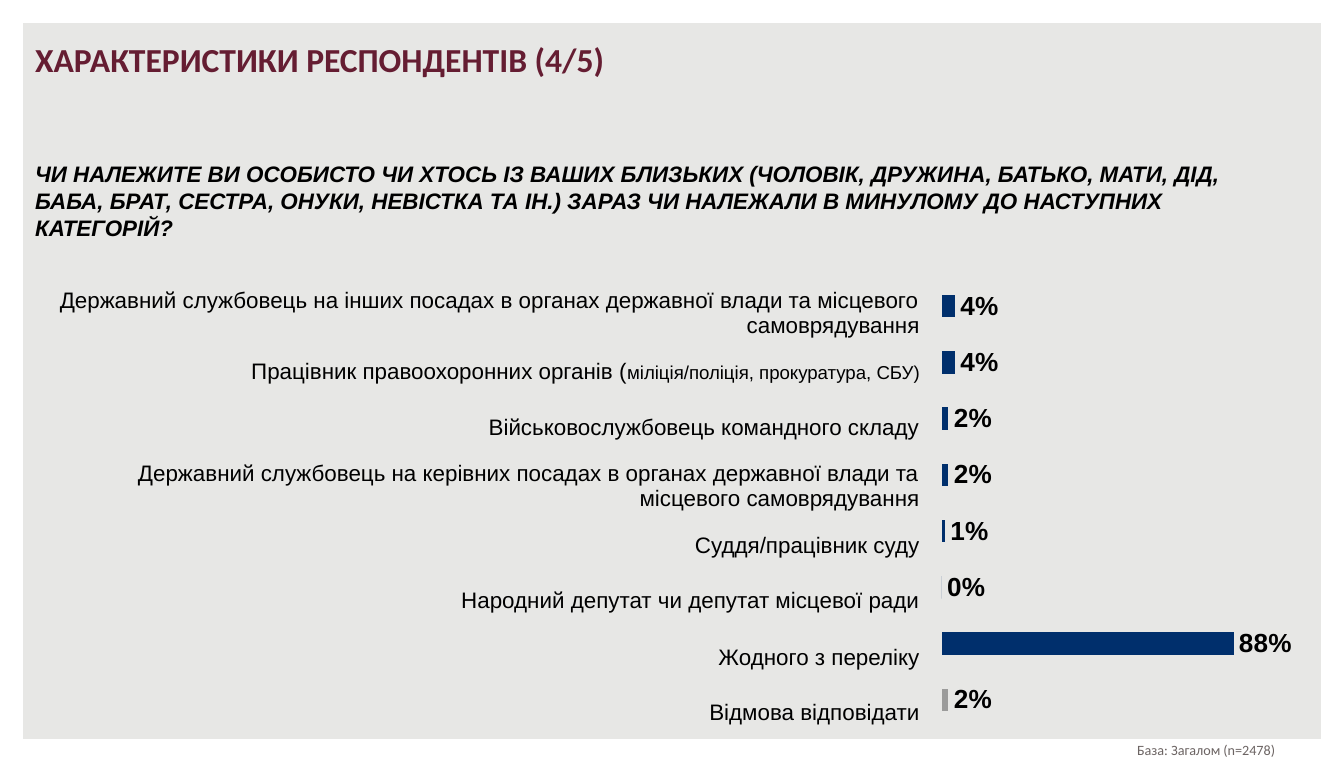
"""Build the survey slide on respondent characteristics."""
from dataclasses import dataclass

from lxml.etree import SubElement
from pptx import Presentation
from pptx.chart.data import CategoryChartData
from pptx.dml.color import RGBColor
from pptx.enum.chart import XL_CHART_TYPE, XL_LABEL_POSITION, XL_TICK_LABEL_POSITION
from pptx.enum.shapes import MSO_SHAPE
from pptx.enum.text import MSO_ANCHOR, MSO_AUTO_SIZE, PP_ALIGN
from pptx.oxml import parse_xml
from pptx.oxml.ns import nsdecls, qn
from pptx.util import Cm, Pt

COLORS = {
    "background": "E7E7E5",
    "frame": "FFFFFF",
    "text": "000000",
    "title": "651D32",
    "note": "6C6463",
    "bar": "002F6C",
    "refusal": "9B9B9A",
}
NO_STYLE_NO_GRID = "{2D5ABB26-0587-4C30-8999-92F81FD0307C}"
PLOT_AREA = {"x": 0.195, "y": 0.04, "w": 0.754, "h": 0.96}


@dataclass(frozen=True)
class Place:
    """Position and size in centimetres."""
    left: float
    top: float
    width: float
    height: float

    def lengths(self) -> tuple:
        """Return left, top, width and height as lengths."""
        return Cm(self.left), Cm(self.top), Cm(self.width), Cm(self.height)


@dataclass(frozen=True)
class TextStyle:
    """Character formatting."""
    size: float
    font: str = "Arial"
    color: str = "text"
    bold: bool = False
    italic: bool = False


@dataclass(frozen=True)
class Answer:
    """One answer with its share and an optional smaller detail."""
    label: str
    share: float
    detail: str = ""
    spacing: float = 1.0


ANSWERS = [
    Answer("Державний службовець на iнших посадах в органах державної влади та мiсцевого самоврядування", 0.04),
    Answer("Працiвник правоохоронних органiв (", 0.04, "мiлiцiя/полiцiя, прокуратура, СБУ)"),
    Answer("Вiйськовослужбовець командного складу", 0.02),
    Answer("Державний службовець на керiвних посадах в органах державної влади та мiсцевого самоврядування", 0.02),
    Answer("Суддя/працiвник суду", 0.01),
    Answer("Народний депутат чи депутат мiсцевої ради", 0),
    Answer("Жодного з перелiку", 0.88, spacing=1.15),
    Answer("Вiдмова відповідати", 0.02, spacing=1.15),
]


def rgb(name: str) -> RGBColor:
    """Look up a named colour."""
    return RGBColor.from_string(COLORS[name])


def format_font(font, style: TextStyle) -> None:
    """Apply a text style to a font."""
    font.name = style.font
    font.size = Pt(style.size)
    font.bold = style.bold
    font.italic = style.italic
    font.color.rgb = rgb(style.color)


def write_text(box, place: Place, text: str, style: TextStyle,
               align=PP_ALIGN.LEFT, anchor=MSO_ANCHOR.TOP) -> None:
    """Place a box and fill it with one formatted paragraph."""
    box.left, box.top, box.width, box.height = place.lengths()
    frame = box.text_frame
    frame.text = text
    frame.word_wrap = True
    frame.auto_size = MSO_AUTO_SIZE.NONE
    frame.vertical_anchor = anchor
    para = frame.paragraphs[0]
    para.alignment = align
    para.space_before = Pt(0)
    format_font(para.runs[0].font, style)


def remove_bullet(para) -> None:
    """Remove the bullet and indent of a paragraph."""
    properties = para._p.get_or_add_pPr()
    properties.set("marL", "0")
    properties.set("indent", "0")
    SubElement(properties, qn("a:buNone"))


def add_frame(page, deck) -> None:
    """Draw the white frame around the slide."""
    frame = page.shapes.add_shape(MSO_SHAPE.FRAME, 0, 0, deck.slide_width, deck.slide_height)
    frame.adjustments[0] = 0.03
    frame.shadow.inherit = False
    frame.fill.solid()
    frame.fill.fore_color.rgb = rgb("frame")
    frame.line.fill.background()


def add_answers(page, place: Place) -> None:
    """Add the table of answer labels."""
    table = page.shapes.add_table(len(ANSWERS), 1, *place.lengths()).table
    table.first_row = table.horz_banding = False
    table._tbl.tblPr.find(qn("a:tableStyleId")).text = NO_STYLE_NO_GRID
    for row, answer in enumerate(ANSWERS):
        cell = table.cell(row, 0)
        cell.fill.background()
        cell.vertical_anchor = MSO_ANCHOR.MIDDLE
        cell.margin_left = cell.margin_right = Cm(0.2)
        cell.text_frame.text = answer.label
        para = cell.text_frame.paragraphs[0]
        para.alignment = PP_ALIGN.RIGHT
        para.line_spacing = answer.spacing
        format_font(para.runs[0].font, TextStyle(12))
        if answer.detail:
            span = para.add_run()
            span.text = answer.detail
            format_font(span.font, TextStyle(10))


def add_shares(page, place: Place) -> None:
    """Add the bar chart of answer shares."""
    data = CategoryChartData(number_format="0%")
    data.categories = [str(number) for number in range(1, len(ANSWERS) + 1)]
    data.add_series("Series 1", [answer.share for answer in ANSWERS])
    chart = page.shapes.add_chart(XL_CHART_TYPE.BAR_CLUSTERED, *place.lengths(), data).chart
    chart.has_legend = chart.has_title = False
    format_font(chart.font, TextStyle(18, "Calibri"))

    chart.category_axis.reverse_order = True
    chart.category_axis.tick_label_position = XL_TICK_LABEL_POSITION.NONE
    chart.category_axis.format.line.fill.background()
    chart.value_axis.visible = False
    chart.value_axis.has_major_gridlines = False
    chart.value_axis.minimum_scale = 0
    chart.value_axis.maximum_scale = 1

    plot = chart.plots[0]
    plot.gap_width = 150
    plot.vary_by_categories = False
    series = plot.series[0]
    series.invert_if_negative = False
    refusal = series.points[len(ANSWERS) - 1]
    for bar, color in ((series, "bar"), (refusal, "refusal")):
        bar.format.fill.solid()
        bar.format.fill.fore_color.rgb = rgb(color)

    labels = series.data_labels
    labels.show_value = True
    labels.number_format = "0%"
    labels.number_format_is_linked = False
    labels.position = XL_LABEL_POSITION.OUTSIDE_END
    format_font(labels.font, TextStyle(14, bold=True))
    set_plot_area(chart)


def set_plot_area(chart) -> None:
    """Fix the inner plot area as fractions of the chart."""
    modes = '<c:xMode val="edge"/><c:yMode val="edge"/>'
    sizes = "".join(f'<c:{side} val="{value}"/>' for side, value in PLOT_AREA.items())
    layout = parse_xml(
        f'<c:layout {nsdecls("c")}><c:manualLayout><c:layoutTarget val="inner"/>'
        f"{modes}{sizes}</c:manualLayout></c:layout>")
    area = chart._chartSpace.chart.plotArea
    for old in area.findall(qn("c:layout")):
        area.remove(old)
    area.insert(0, layout)


def main() -> None:
    """Build and save the deck."""
    deck = Presentation()
    deck.slide_width, deck.slide_height = Cm(25.4), Cm(14.4)
    page = deck.slides.add_slide(deck.slide_layouts[1])
    page.background.fill.solid()
    page.background.fill.fore_color.rgb = rgb("background")
    add_frame(page, deck)

    write_text(page.shapes.title, Place(0.41, 0.61, 21.6, 1.3),
               "ХАРАКТЕРИСТИКИ РЕСПОНДЕНТІВ (4/5)",
               TextStyle(18, "Calibri", "title", bold=True))
    question = page.placeholders[1]
    write_text(question, Place(0.41, 2.9, 23.6, 1.8),
               "ЧИ НАЛЕЖИТЕ ВИ ОСОБИСТО ЧИ ХТОСЬ IЗ ВАШИХ БЛИЗЬКИХ (ЧОЛОВIК, ДРУЖИНА, БАТЬКО, МАТИ, ДIД, "
               "БАБА, БРАТ, СЕСТРА, ОНУКИ, НЕВIСТКА ТА IН.) ЗАРАЗ ЧИ НАЛЕЖАЛИ В МИНУЛОМУ ДО НАСТУПНИХ КАТЕГОРIЙ?",
               TextStyle(12, bold=True, italic=True))
    remove_bullet(question.text_frame.paragraphs[0])
    add_answers(page, Place(0.61, 5.31, 16.97, 8.32))
    add_shares(page, Place(16.18, 4.9, 8.31, 8.86))
    base = Place(20.57, 13.89, 4.45, 0.58)
    write_text(page.shapes.add_textbox(*base.lengths()), base, "База: Загалом (n=2478)",
               TextStyle(7.6, "Calibri", "note"), PP_ALIGN.CENTER, MSO_ANCHOR.MIDDLE)
    deck.save("out.pptx")


if __name__ == "__main__":
    main()
